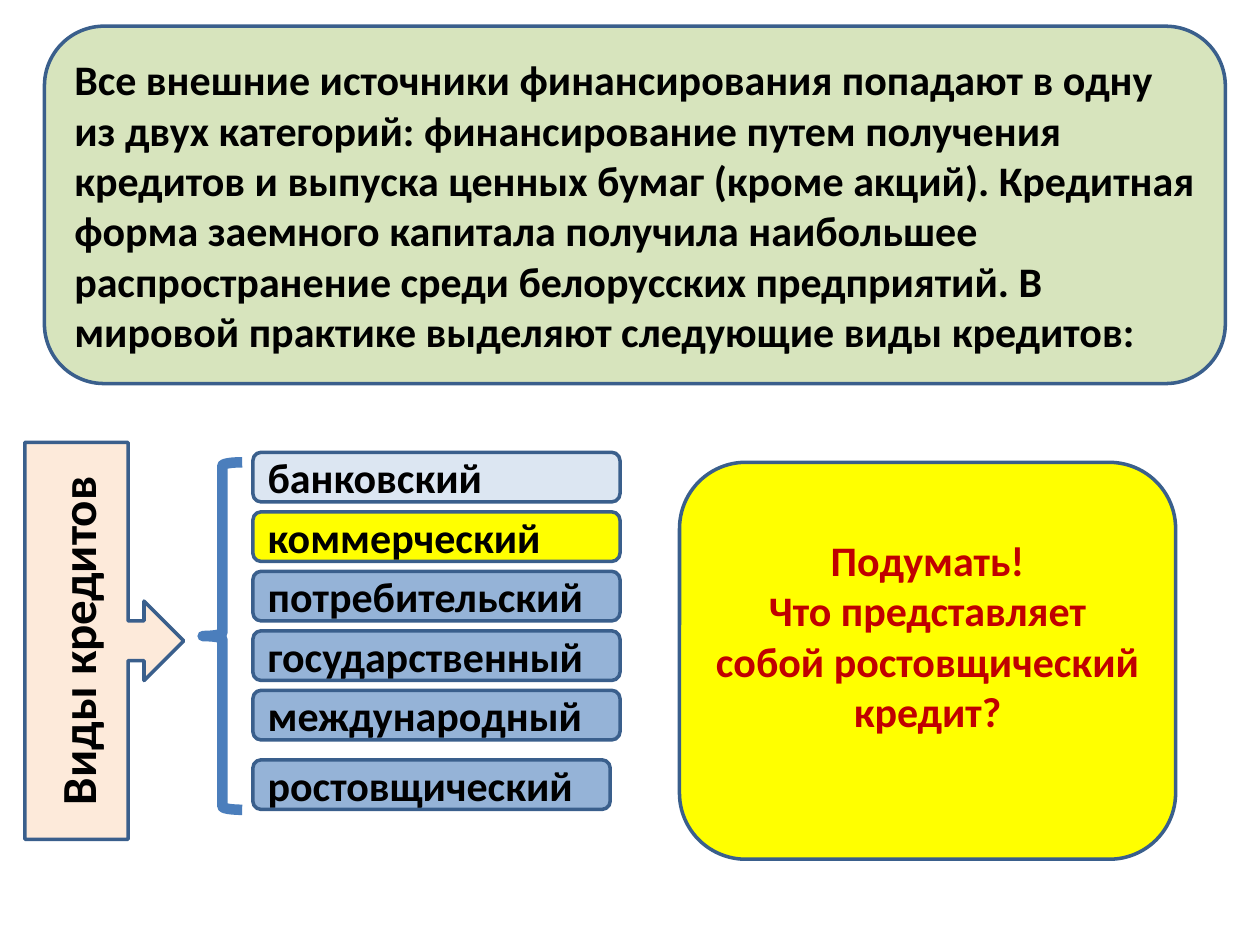
from pptx import Presentation
from pptx.dml.color import RGBColor
from pptx.enum.shapes import MSO_SHAPE
from pptx.enum.text import MSO_ANCHOR, PP_ALIGN
from pptx.util import Pt

ROUNDED = MSO_SHAPE.ROUNDED_RECTANGLE
CALLOUT = MSO_SHAPE.RIGHT_ARROW_CALLOUT
BRACE = MSO_SHAPE.LEFT_BRACE
MIDDLE = MSO_ANCHOR.MIDDLE
LEFT, CENTER = PP_ALIGN.LEFT, PP_ALIGN.CENTER

COLORS = {
    "outline": "3A5F8C", "brace": "4B7EBC", "text": "000000", "question": "C00000",
    "green": "D7E4BD", "peach": "FDEADA", "pale": "DCE6F2", "blue": "95B3D7",
    "yellow": "FFFF00",
}

INTRO = (
    "Все внешние источники финансирования попадают в одну из двух категорий: "
    "финансирование путем получения кредитов и выпуска ценных бумаг (кроме акций). "
    "Кредитная форма заемного капитала получила наибольшее распространение среди "
    "белорусских предприятий. В мировой практике выделяют следующие виды кредитов:"
)
CREDITS = [
    ("банковский", "pale"),
    ("коммерческий", "yellow"),
    ("потребительский", "blue"),
    ("государственный", "blue"),
    ("международный", "blue"),
]


class CreditSlide:
    """Holds the slide and its style, and draws each kind of element."""

    def __init__(self, slide, font="Calibri", size=24):
        self.slide, self.font, self.size = slide, font, size

    def outline(self, kind, box, color, width):
        shape = self.slide.shapes.add_shape(kind, *map(Pt, box))
        shape.shadow.inherit = False
        shape.line.color.rgb = RGBColor.from_string(COLORS[color])
        shape.line.width = Pt(width)
        return shape

    def panel(self, box, fill, text, kind=ROUNDED, align=LEFT, color="text", size=None):
        shape = self.outline(kind, box, "outline", 2)
        shape.fill.solid()
        shape.fill.fore_color.rgb = RGBColor.from_string(COLORS[fill])
        frame = shape.text_frame
        frame.word_wrap = True
        frame.vertical_anchor = MIDDLE
        frame.text = text
        for paragraph in frame.paragraphs:
            paragraph.alignment = align
            for run in paragraph.runs:
                run.font.name = self.font
                run.font.size = Pt(size or self.size)
                run.font.bold = True
                run.font.color.rgb = RGBColor.from_string(COLORS[color])
        return frame

    def vertical_callout(self, box, fill, text):
        frame = self.panel(box, fill, text, CALLOUT, CENTER, size=28)
        frame._txBody.bodyPr.set("vert", "vert270")

    def brace(self, box):
        self.outline(BRACE, box, "brace", 6).fill.background()


def main():
    deck = Presentation()
    deck.slide_width, deck.slide_height = Pt(720), Pt(540)
    page = CreditSlide(deck.slides.add_slide(deck.slide_layouts[6]))

    intro = page.panel((25.4, 15, 674.8, 204.2), "green", INTRO)
    intro.paragraphs[0].space_after = Pt(6)

    page.vertical_callout((14.2, 252.8, 90.8, 226.8), "peach", "Виды кредитов")
    page.brace((115.8, 264.2, 22.6, 198.6))

    for row, (credit, fill) in enumerate(CREDITS):
        page.panel((144.5, 258.5 + 34 * row, 209.8, 28.35), fill, credit)
    page.panel((144.5, 434.2, 204.2, 28.35), "blue", "ростовщический")

    question = page.panel(
        (388.3, 264.2, 283.5, 226.8), "yellow",
        "Подумать!\nЧто представляет собой ростовщический кредит?",
        align=CENTER, color="question",
    )
    question.margin_bottom = Pt(32.6)

    deck.save("out.pptx")


if __name__ == "__main__":
    main()
